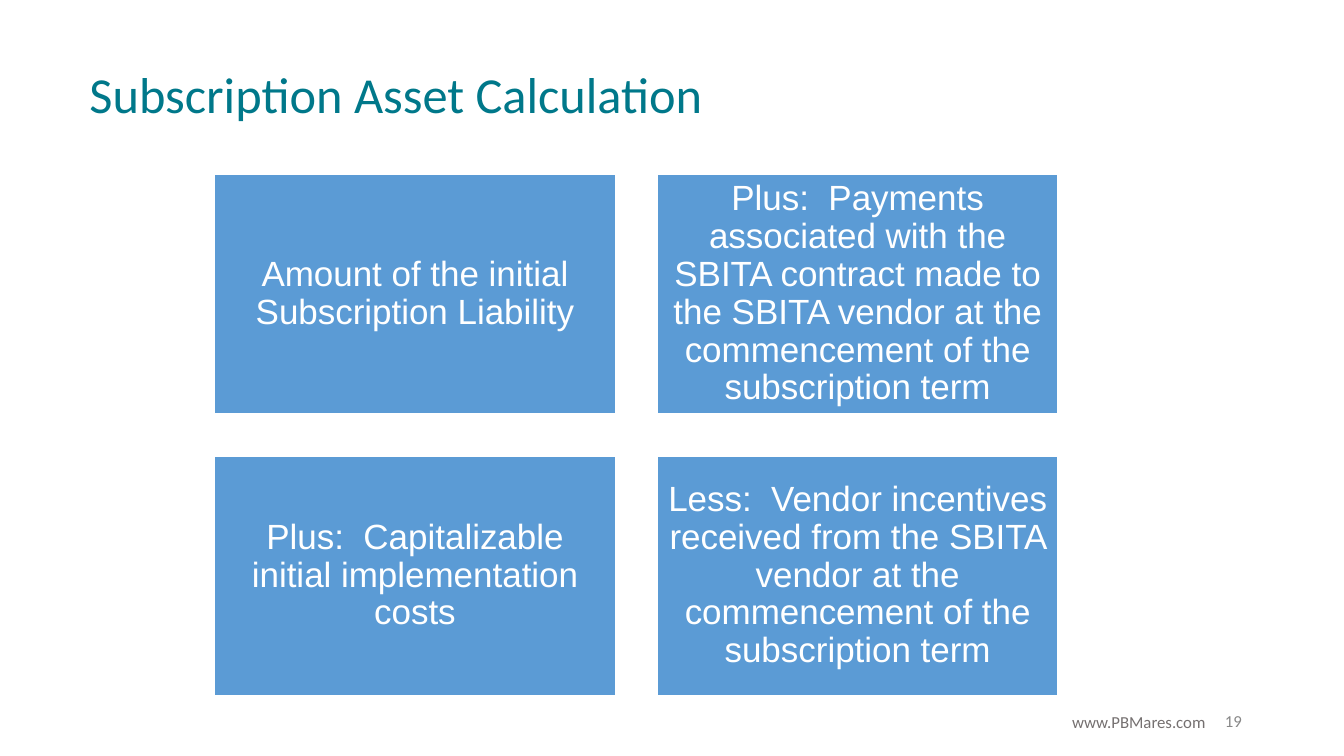
from pptx import Presentation
from pptx.dml.color import RGBColor
from pptx.enum.shapes import MSO_SHAPE
from pptx.enum.text import MSO_ANCHOR, MSO_AUTO_SIZE, PP_ALIGN
from pptx.util import Cm, Pt

TEAL = RGBColor(0x00, 0x78, 0x8A)
BLUE = RGBColor(0x5B, 0x9B, 0xD5)
WHITE = RGBColor(0xFF, 0xFF, 0xFF)
PAGE_GRAY = RGBColor(0x88, 0x88, 0x88)
ADDRESS_GRAY = RGBColor(0x75, 0x70, 0x70)

COMPONENTS = [
    "Amount of the initial Subscription Liability",
    "Plus:  Payments associated with the SBITA contract made to the SBITA vendor "
    "at the commencement of the subscription term",
    "Plus:  Capitalizable initial implementation costs",
    "Less:  Vendor incentives received from the SBITA vendor at the commencement "
    "of the subscription term",
]


def write_text(shape, text, font_name, size, color, alignment, anchor):
    """Put one formatted paragraph into a shape and return the paragraph."""
    frame = shape.text_frame
    frame.text = text
    frame.word_wrap = True
    frame.auto_size = MSO_AUTO_SIZE.NONE
    frame.vertical_anchor = anchor
    paragraph = frame.paragraphs[0]
    paragraph.alignment = alignment
    font = paragraph.runs[0].font
    font.name = font_name
    font.size = Pt(size)
    font.color.rgb = color
    return paragraph


def add_title(slide, left, top, width, height):
    """Move the title placeholder into its box and fill it."""
    title = slide.shapes.title
    title.left, title.top, title.width, title.height = left, top, width, height
    write_text(title, "Subscription Asset Calculation", "Calibri", 36, TEAL,
               PP_ALIGN.LEFT, MSO_ANCHOR.TOP)


def add_component_grid(slide, left, top, width, height, columns=2, gap=Cm(1.02)):
    """Lay out the calculation components as equal blocks in a grid."""
    rows = len(COMPONENTS) // columns
    block_width = (width - gap * (columns - 1)) // columns
    block_height = (height - gap * (rows - 1)) // rows
    for index, text in enumerate(COMPONENTS):
        row, column = divmod(index, columns)
        block = slide.shapes.add_shape(
            MSO_SHAPE.RECTANGLE,
            left + column * (block_width + gap),
            top + row * (block_height + gap),
            block_width, block_height)
        block.shadow.inherit = False
        block.fill.solid()
        block.fill.fore_color.rgb = BLUE
        block.line.color.rgb = WHITE
        block.line.width = Pt(2)
        frame = block.text_frame
        frame.margin_left = frame.margin_right = Cm(0.25)
        frame.margin_top = frame.margin_bottom = Cm(0.25)
        paragraph = write_text(block, text, "Arial", 25, WHITE,
                               PP_ALIGN.CENTER, MSO_ANCHOR.MIDDLE)
        paragraph.line_spacing = 0.9


def add_footer(slide, left, top, width, height):
    """Place the page number and the web address at the bottom right."""
    number = slide.shapes.add_textbox(left, top, width, height)
    write_text(number, "19", "Calibri", 12, PAGE_GRAY,
               PP_ALIGN.RIGHT, MSO_ANCHOR.MIDDLE)
    address = slide.shapes.add_textbox(left + Cm(2.84), top + Cm(0.15), Cm(6.02), Cm(0.77))
    write_text(address, "www.PBMares.com", "Calibri", 12, ADDRESS_GRAY,
               PP_ALIGN.LEFT, MSO_ANCHOR.TOP)


def main():
    """Build and save the presentation."""
    presentation = Presentation()
    presentation.slide_width = Cm(33.87)
    presentation.slide_height = Cm(19.05)
    slide = presentation.slides.add_slide(presentation.slide_layouts[5])
    add_title(slide, Cm(2), Cm(1.47), Cm(23.2), Cm(1.8))
    add_component_grid(slide, Cm(5.39), Cm(4.37), Cm(21.29), Cm(13.18))
    add_footer(slide, Cm(23.93), Cm(17.65), Cm(7.62), Cm(1.02))
    presentation.save("out.pptx")


if __name__ == "__main__":
    main()
